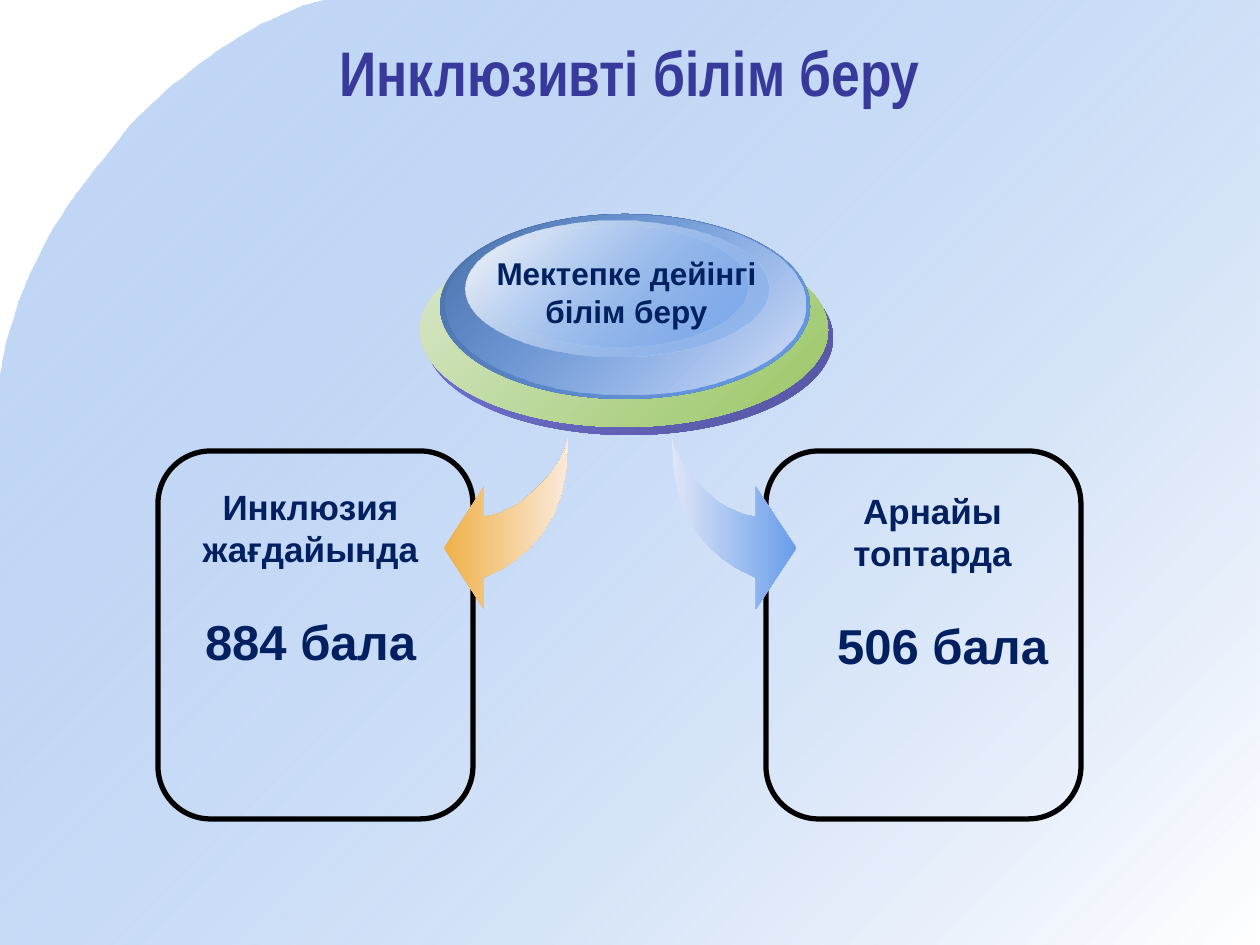
from lxml import etree
from pptx import Presentation
from pptx import util as u
from pptx.dml.color import RGBColor
from pptx.enum import shapes, text
from pptx.oxml.ns import qn

EMU_PER_PX = 914400 / 126
WIDTH, HEIGHT = 1260, 945
NAVY, INDIGO = "002060", "37399B"
BLUE, WHITE = "699DE9", "FFFFFF"


def px(value):
    return u.Emu(round(value * EMU_PER_PX))


def rgb(value):
    return RGBColor.from_string(value)


def bezier(start, control1, control2, end, steps=24):
    """Points along a cubic curve, without its start."""
    points = []
    for step in range(1, steps + 1):
        t = step / steps
        weights = ((1 - t) ** 3, 3 * t * (1 - t) ** 2, 3 * t * t * (1 - t), t ** 3)
        knots = (start, control1, control2, end)
        points.append(tuple(sum(w * knot[axis] for w, knot in zip(weights, knots))
                            for axis in (0, 1)))
    return points


def fill_gradient(shape, stops, angle):
    """Two (colour, opacity %) stops, with a clockwise angle."""
    shape.shadow.inherit = False
    shape.line.fill.background()
    shape.fill.gradient()
    shape.fill.gradient_angle = (360 - angle) % 360
    for stop, (color, _) in zip(shape.fill.gradient_stops, stops):
        stop.color.rgb = rgb(color)
    colors = shape.element.spPr.iter(qn("a:srgbClr"))
    for node, (_, opacity) in zip(list(colors), stops):
        if opacity < 100:
            etree.SubElement(node, qn("a:alpha")).set("val", str(opacity * 1000))


def add_outline(slide, points, stops, angle):
    builder = slide.shapes.build_freeform(*points[0], scale=EMU_PER_PX)
    builder.add_line_segments(points[1:], close=True)
    outline = builder.convert_to_shape()
    fill_gradient(outline, stops, angle)
    return outline


def add_ellipse(slide, box, stops):
    ellipse = slide.shapes.add_shape(shapes.MSO_SHAPE.OVAL, *map(px, box))
    fill_gradient(ellipse, stops, 45)


def add_card(slide, box):
    card = slide.shapes.add_shape(shapes.MSO_SHAPE.ROUNDED_RECTANGLE, *map(px, box))
    card.adjustments[0] = 0.167
    card.shadow.inherit = False
    card.fill.background()
    card.line.color.rgb = rgb("000000")
    card.line.width = u.Pt(3)


def write(paragraph, content, size, color=NAVY, font="Arial", leading=None, before=0):
    paragraph.alignment = text.PP_ALIGN.CENTER
    if leading:
        paragraph.line_spacing = u.Pt(round(size * leading, 1))
    if before:
        paragraph.space_before = u.Pt(before)
    run = paragraph.add_run()
    run.text = content
    run.font.name, run.font.size, run.font.bold = font, u.Pt(size), True
    run.font.color.rgb = rgb(color)


def add_text_box(slide, box, lines, wrap=True):
    """Each line is (content, size, space before)."""
    frame = slide.shapes.add_textbox(*map(px, box)).text_frame
    frame.word_wrap = wrap
    for index, (content, size, before) in enumerate(lines):
        paragraph = frame.add_paragraph() if index else frame.paragraphs[0]
        write(paragraph, content, size, leading=1.2, before=before)
    return frame


def add_backdrop(slide):
    corner = [(325, 0)]
    for curve in (((239, 20), (146, 105), (123, 135)),
                  ((101, 166), (20, 244), (0, 379))):
        corner += bezier(corner[-1], *curve)
    points = corner + [(0, HEIGHT), (WIDTH, HEIGHT), (WIDTH, 0)]
    backdrop = add_outline(slide, points, [(BLUE, 39), (WHITE, 100)], 45)
    slide.shapes.element.insert(2, backdrop.element)  # behind the title


def add_arrow(slide, tail_x, direction, stops):
    """Curved arrow from its tail; direction -1 points left, 1 right."""
    tail, head_base = (0, 0), (84, 79)
    sweep = [tail] + bezier(tail, (0, 70), (24, 112), (84, 140))
    sweep += [(84, 171), (124, 110), (84, 49), head_base]
    sweep += bezier(head_base, (50, 76), (6, 34), tail)[:-1]
    points = [(tail_x + direction * x, 438 + y) for x, y in sweep]
    add_outline(slide, points, stops, 0)


def add_emblem(slide):
    layers = [
        ((425, 241, 408, 194), [("7476DC", 100), ("5556A1", 100)]),
        ((420, 233, 408, 194), [("DAE8CD", 100), ("9AC664", 100)]),
        ((440, 214, 370, 185), [("4B70A7", 100), (BLUE, 100)]),
        ((445, 215, 360, 180), [(BLUE, 0), ("DAE3F8", 100)]),
        ((486, 226, 261, 121), [("5F8ED3", 100), (BLUE, 48)]),
        ((466, 221, 302, 136), [(WHITE, 100), (BLUE, 38)]),
    ]
    for box, stops in layers:
        add_ellipse(slide, box, stops)
    add_text_box(slide, (478, 248, 297, 89),
                 [("Мектепке дейінгі", 18, 0), ("білім беру", 18, 0)], wrap=False)


def main():
    prs = Presentation()
    prs.slide_width, prs.slide_height = px(WIDTH), px(HEIGHT)
    slide = prs.slides.add_slide(prs.slide_layouts[5])

    # Backdrop and title
    add_backdrop(slide)
    title = slide.shapes.title
    title.left, title.top, title.width, title.height = map(px, (63, 32, 1134, 78))
    title.text_frame.vertical_anchor = text.MSO_ANCHOR.MIDDLE
    write(title.text_frame.paragraphs[0], "Инклюзивті білім беру", 36,
          color=INDIGO, font="Arial Narrow")

    # Cards with the numbers of children
    for left in (766, 158):
        add_card(slide, (left, 451, 315, 368))
    add_text_box(slide, (170, 479, 281, 199),
                 [("Инклюзия жағдайында", 20, 0), ("884 бала", 28, 24)])
    special_groups = add_text_box(slide, (792, 483, 281, 199),
                                  [("Арнайы топтарда", 20, 0), ("506 бала", 28, 24)])
    count_format = special_groups.paragraphs[1]._p.get_or_add_pPr()
    count_format.set("marL", str(px(20)))
    count_format.set("indent", "0")

    # Arrows from the emblem to the cards
    add_arrow(slide, 568, -1, [("EFB049", 100), ("FAEADA", 100)])
    add_arrow(slide, 672, 1, [("DEE6F8", 100), (BLUE, 100)])
    add_emblem(slide)

    prs.save("out.pptx")


if __name__ == "__main__":
    main()
